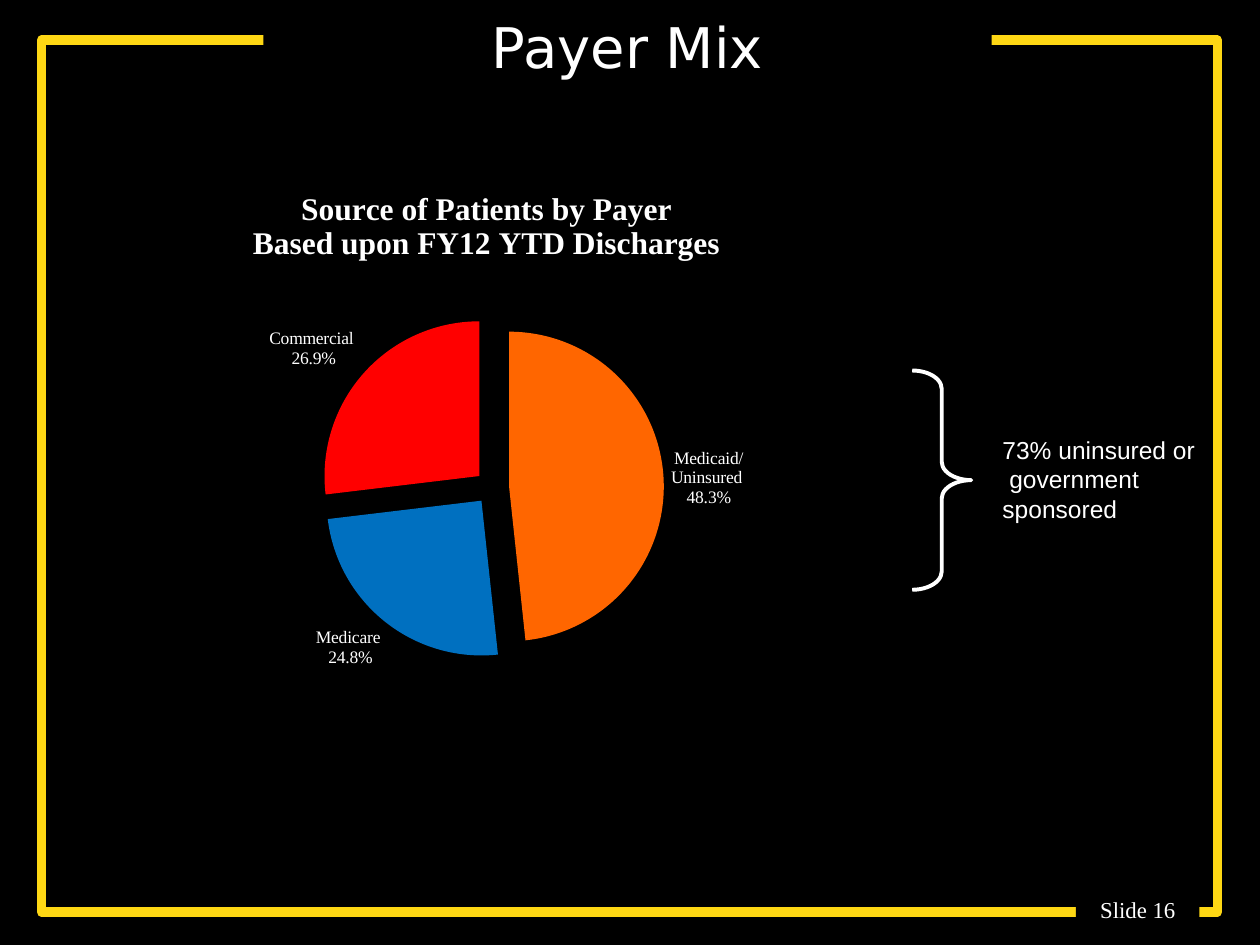
from pptx import Presentation
from pptx import util as u
from pptx.chart.data import CategoryChartData
from pptx.dml.color import RGBColor
from pptx.enum import chart as ch, shapes, text
from pptx.oxml import parse_xml
from pptx.oxml.ns import nsdecls

BLACK = RGBColor(0x00, 0x00, 0x00)
WHITE = RGBColor(0xFF, 0xFF, 0xFF)
GOLD = RGBColor(0xFE, 0xD7, 0x14)
ORANGE = RGBColor(0xFF, 0x66, 0x00)
BLUE = RGBColor(0x00, 0x70, 0xC0)
RED = RGBColor(0xFF, 0x00, 0x00)
SERIF = "Times New Roman"


def write(tf, lines, name, size, align=None, bold=False):
    for i, line in enumerate(lines):
        p = tf.paragraphs[0] if i == 0 else tf.add_paragraph()
        r = p.add_run()
        r.text = line
        p.alignment = align
        for font in (p.font, r.font) if tf in label_frames else (p.font,):
            font.name, font.size, font.bold = name, u.Pt(size), bold
            font.color.rgb = WHITE


def layout(**values):
    items = "".join(f'<c:{k} val="{v}"/>' for k, v in values.items())
    return parse_xml(f'<c:layout {nsdecls("c")}><c:manualLayout>{items}'
                     '</c:manualLayout></c:layout>')


label_frames = []
prs = Presentation()
prs.slide_width, prs.slide_height = u.Cm(25.4), u.Cm(19.05)
s = prs.slides.add_slide(prs.slide_layouts[5])
s.background.fill.solid()
s.background.fill.fore_color.rgb = BLACK

frame = s.shapes.add_shape(shapes.MSO_SHAPE.RECTANGLE,
                           u.Cm(0.84), u.Cm(0.81), u.Cm(23.7), u.Cm(17.58))
frame.shadow.inherit = False
frame.fill.background()
frame.line.color.rgb = GOLD
frame.line.width = u.Pt(5.35)

number = s.shapes.add_shape(shapes.MSO_SHAPE.RECTANGLE,
                            u.Cm(21.69), u.Cm(17.93), u.Cm(2.49), u.Cm(0.81))
number.shadow.inherit = False
number.line.fill.background()
write(number.text_frame, ["Slide 16"], SERIF, 13, text.PP_ALIGN.CENTER)

title = s.shapes.title
number._element.addnext(title._element)
title.left, title.top = u.Cm(5.31), u.Cm(0.36)
title.width, title.height = u.Cm(14.68), u.Cm(1.3)
tf = title.text_frame
tf.auto_size = text.MSO_AUTO_SIZE.NONE
tf.vertical_anchor = text.MSO_ANCHOR.BOTTOM
tf.margin_top, tf.margin_bottom = 0, u.Cm(0.05)
write(tf, ["Payer Mix"], "DejaVu Sans", 32, text.PP_ALIGN.CENTER)

for sp in (number, title):
    sp.fill.solid()
    sp.fill.fore_color.rgb = BLACK

data = CategoryChartData(number_format="0.0%")
data.categories = ["Medicaid/Uninsured", "Medicare", "Commercial"]
data.add_series("Series 1", [0.483, 0.248, 0.269])
chart = s.shapes.add_chart(ch.XL_CHART_TYPE.PIE, u.Cm(2.03), u.Cm(2.9),
                           u.Cm(16.61), u.Cm(12.37), data).chart
chart.has_legend = False
chart.font.name, chart.font.size = SERIF, u.Pt(10)
chart.font.color.rgb = WHITE

chart.has_title = True
write(chart.chart_title.text_frame,
      ["Source of Patients by Payer", "Based upon FY12 YTD Discharges"],
      SERIF, 18, bold=True)
chart_title = chart._chartSpace.chart.find("{*}title")
for old in chart_title.findall("{*}layout"):
    chart_title.remove(old)
chart_title.find("{*}tx").addnext(layout(xMode="edge", yMode="edge", x=0.18, y=0.07))

plot_area = chart._chartSpace.chart.plotArea
for old in plot_area.findall("{*}layout"):
    plot_area.remove(old)
plot_area.insert(0, layout(layoutTarget="inner", xMode="edge", yMode="edge",
                           x=0.08, y=0.28, w=0.79, h=0.56))

plot = chart.plots[0]
plot.vary_by_categories = True
series = plot.series[0]
labels = series.data_labels
labels.show_value = labels.show_category_name = True
labels.number_format, labels.number_format_is_linked = "0.0%", False
labels.position = ch.XL_LABEL_POSITION.OUTSIDE_END
labels.font.name, labels.font.size = SERIF, u.Pt(10)
labels.font.color.rgb = WHITE

slices = [
    (ORANGE, ["Medicaid/", "Uninsured ", "48.3%"]),
    (BLUE, ["Medicare", " 24.8%"]),
    (RED, ["Commercial ", "26.9%"]),
]
for i, (color, lines) in enumerate(slices):
    point = series.points[i]
    point.format.fill.solid()
    point.format.fill.fore_color.rgb = color
    tf = point.data_label.text_frame
    label_frames.append(tf)
    write(tf, lines, SERIF, 10)
    point.data_label.position = ch.XL_LABEL_POSITION.OUTSIDE_END
series._element.find("{*}dPt").addprevious(
    parse_xml(f'<c:explosion {nsdecls("c")} val="11"/>'))

tb = s.shapes.add_textbox(u.Cm(19.96), u.Cm(8.64), u.Cm(5.44), u.Cm(2.06))
tb.text_frame.word_wrap = True
write(tb.text_frame, ["73% uninsured or", " government sponsored"], "Arial", 14)

brace = s.shapes.add_shape(shapes.MSO_SHAPE.RIGHT_BRACE,
                           u.Cm(18.39), u.Cm(7.47), u.Cm(1.19), u.Cm(4.42))
brace.shadow.inherit = False
brace.adjustments[0], brace.adjustments[1] = 0.31, 0.5
brace.fill.background()
brace.line.color.rgb = WHITE
brace.line.width = u.Pt(2.25)

prs.save("out.pptx")
